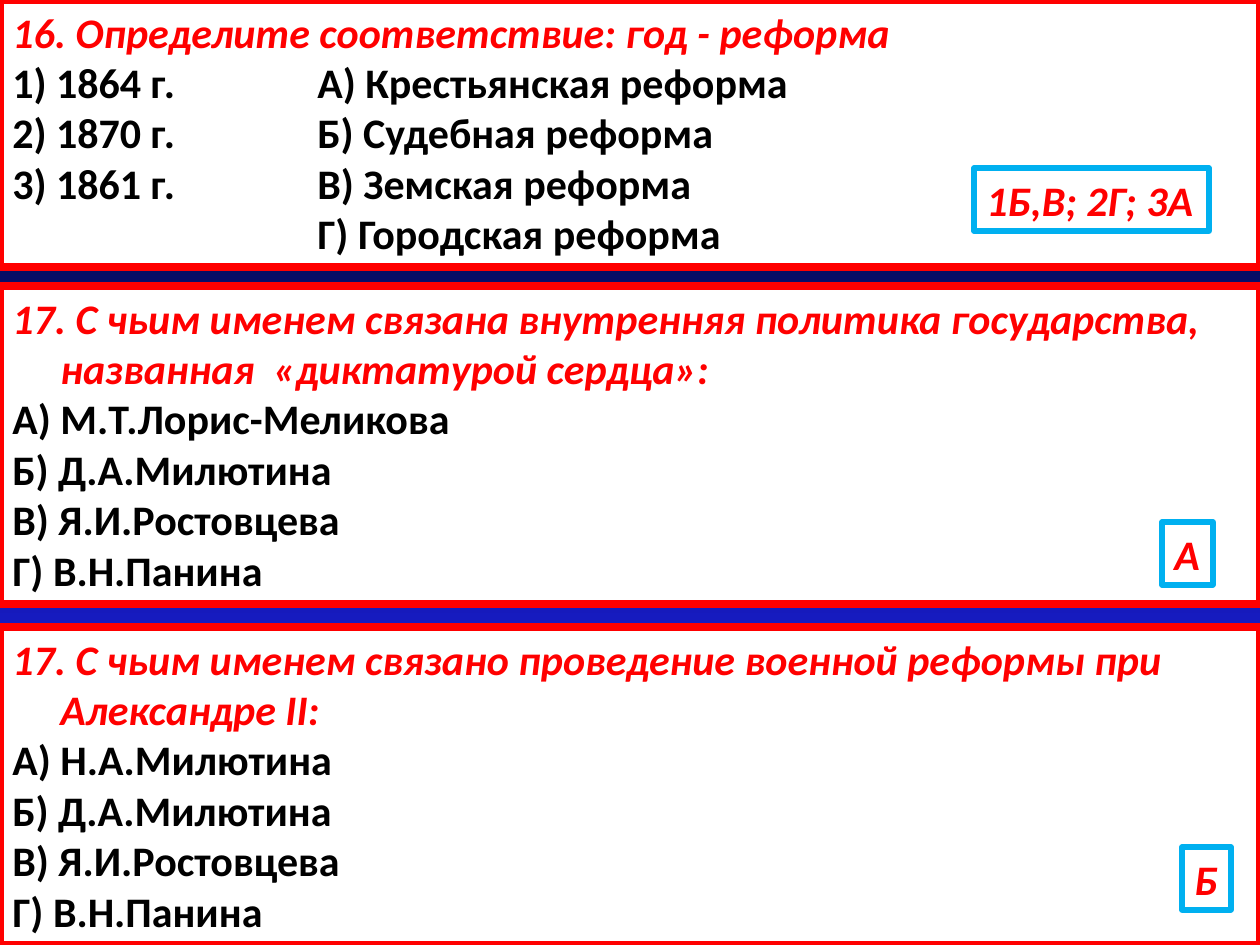
from dataclasses import dataclass

from lxml import etree
from pptx import Presentation
from pptx.dml.color import RGBColor
from pptx.enum.shapes import MSO_SHAPE
from pptx.enum.text import MSO_ANCHOR, PP_ALIGN
from pptx.oxml.ns import qn
from pptx.util import Pt

RECT = MSO_SHAPE.RECTANGLE
TOP = MSO_ANCHOR.TOP
LEFT = PP_ALIGN.LEFT
PX = 914400 / 126


def px(n):
    return round(n * PX)


@dataclass(frozen=True)
class Theme:
    font: str = "Calibri"
    size: int = 24
    paper: str = "FFFFFF"
    ink: str = "000000"
    accent: str = "FF0000"
    frame: str = "00B0F0"
    panel_line: float = 4.5
    answer_line: float = 3
    backdrop: tuple = ((0, "000000"), (40, "0A128C"), (70, "181CC7"),
                       (88, "7005D4"), (100, "8C3D91"))


class Quiz:
    HANG = 48      # hanging indent of a question
    COLUMN = 305   # tab stop of the second column

    def __init__(self, slide, theme):
        self.s, self.t = slide, theme

    def background(self):
        fill = self.s.background.fill
        fill.gradient()
        fill.gradient_angle = 270
        stops = next(self.s._element.iter(qn("a:gsLst")))
        for old in list(stops):
            stops.remove(old)
        for pos, color in self.t.backdrop:
            gs = etree.SubElement(stops, qn("a:gs"), pos=str(pos * 1000))
            etree.SubElement(gs, qn("a:srgbClr"), val=color)

    def box(self, x, y, w, h, line, width, wrap):
        sp = self.s.shapes.add_shape(RECT, px(x), px(y), px(w), px(h))
        sp.shadow.inherit = False
        sp.fill.solid()
        sp.fill.fore_color.rgb = RGBColor.from_string(self.t.paper)
        sp.line.color.rgb = RGBColor.from_string(line)
        sp.line.width = Pt(width)
        tf = sp.text_frame
        tf.word_wrap = wrap
        tf.vertical_anchor = TOP
        return tf

    def add_text(self, p, text, color, italic):
        p.alignment = LEFT
        r = p.add_run()
        r.text = text
        style = {"name": self.t.font, "size": Pt(self.t.size),
                 "bold": True, "italic": italic}
        for key, value in style.items():
            setattr(r.font, key, value)
        r.font.color.rgb = RGBColor.from_string(color)

    def panel(self, y, h, question, options):
        tf = self.box(0, y, 1260, h, self.t.accent, self.t.panel_line, True)
        p = tf.paragraphs[0]
        pPr = p._p.get_or_add_pPr()
        pPr.set("marL", str(px(self.HANG)))
        pPr.set("indent", str(-px(self.HANG)))
        self.add_text(p, question, self.t.accent, True)
        for option in options:
            p = tf.add_paragraph()
            if "\t" in option:
                tabs = etree.SubElement(p._p.get_or_add_pPr(), qn("a:tabLst"))
                etree.SubElement(tabs, qn("a:tab"), pos=str(px(self.COLUMN)), algn="l")
            self.add_text(p, option, self.t.ink, False)

    def answer(self, x, y, w, text):
        tf = self.box(x, y, w, 63, self.t.frame, self.t.answer_line, False)
        self.add_text(tf.paragraphs[0], text, self.t.accent, True)


# Top, height, question, options, answer (left, top, width, text)
QUESTIONS = [
    (0, 267, "16. Определите соответствие: год - реформа",
     ["1) 1864 г.\tА) Крестьянская реформа",
      "2) 1870 г.\tБ) Судебная реформа",
      "3) 1861 г.\tВ) Земская реформа",
      "\tГ) Городская реформа"],
     (974, 168, 235, "1Б,В; 2Г; 3А")),
    (286, 318, "17. С чьим именем связана внутренняя политика государства, "
               "названная  «диктатурой сердца»:",
     ["А) М.Т.Лорис-Меликова", "Б) Д.А.Милютина",
      "В) Я.И.Ростовцева", "Г) В.Н.Панина"],
     (1162, 522, 51, "А")),
    (627, 318, "17. С чьим именем связано проведение военной реформы при "
               "Александре II:",
     ["А) Н.А.Милютина", "Б) Д.А.Милютина",
      "В) Я.И.Ростовцева", "Г) В.Н.Панина"],
     (1182, 847, 49, "Б")),
]


def main():
    prs = Presentation()
    prs.slide_width, prs.slide_height = px(1260), px(945)
    quiz = Quiz(prs.slides.add_slide(prs.slide_layouts[6]), Theme())
    quiz.background()

    # Question panels, each with its answer on top
    for y, h, question, options, answer in QUESTIONS:
        quiz.panel(y, h, question, options)
        quiz.answer(*answer)

    prs.save("out.pptx")


if __name__ == "__main__":
    main()
